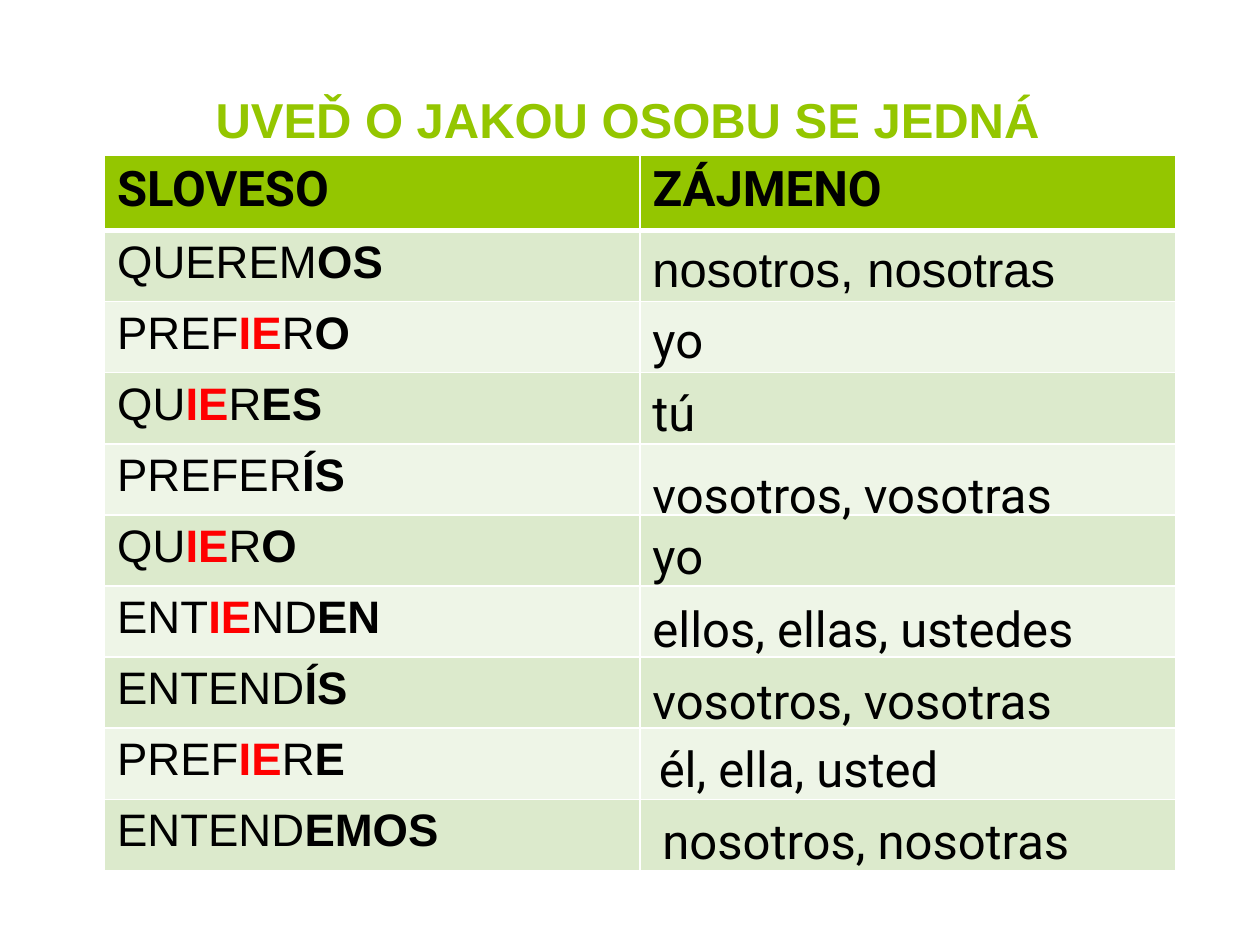
"""Build a Spanish verb exercise slide with a table and its answers."""
from dataclasses import dataclass

from lxml import etree
from pptx import Presentation
from pptx.dml.color import RGBColor
from pptx.enum import text
from pptx.oxml.ns import qn
from pptx.util import Inches, Pt


@dataclass(frozen=True)
class Theme:
    """Colours, fonts and type sizes of the slide."""
    accent: str = "94C600"
    band_dark: str = "DCEACC"
    band_light: str = "EEF5E7"
    line: str = "FFFFFF"
    ink: str = "000000"
    mark: str = "FF0000"
    plain_font: str = "Arial"
    accent_font: str = "Roboto"
    large: int = 28
    verb: int = 26


THEME = Theme()
HEADERS = ("SLOVESO", "ZÁJMENO")
VERBS = (
    ("QUEREM", "", "", "OS"),
    ("PREF", "IE", "R", "O"),
    ("QU", "IE", "R", "ES"),
    ("PREFER", "", "", "ÍS"),
    ("QU", "IE", "R", "O"),
    ("ENT", "IE", "ND", "EN"),
    ("ENTEND", "", "", "ÍS"),
    ("PREF", "IE", "R", "E"),
    ("ENTEND", "", "", "EMOS"),
)
ANSWERS = (
    ("nosotros, nosotras", 0, 0.61, 4.09, THEME.plain_font),
    ("yo", 0, 1.18, 3.39, THEME.accent_font),
    ("tú", 0, 1.76, 3.7, THEME.accent_font),
    ("vosotros, vosotras", 0, 2.41, 3.94, THEME.accent_font),
    ("yo", 0, 2.89, 2.68, THEME.accent_font),
    ("ellos, ellas, ustedes", 0, 3.47, 4.09, THEME.accent_font),
    ("vosotros, vosotras", 0, 4.04, 3.94, THEME.accent_font),
    ("él, ella, usted", 0.05, 4.58, 3.78, THEME.accent_font),
    ("nosotros, nosotras", 0.08, 5.15, 3.94, THEME.accent_font),
)


def add_run(p, wording, size=THEME.large, font=THEME.accent_font,
            color=THEME.ink, bold=False):
    """Append a formatted run to a paragraph."""
    r = p.add_run()
    r.text = wording
    r.font.size = Pt(size)
    r.font.name = font
    r.font.bold = bold
    r.font.color.rgb = RGBColor.from_string(color)


def add_box(s, left, top, width, height):
    """Add a wrapping text box and return its text frame."""
    tf = s.shapes.add_textbox(left, top, width, height).text_frame
    tf.word_wrap = True
    return tf


def style_cell(cell, fill, bottom=1):
    """Fill a cell and draw its borders."""
    tc_pr = cell._tc.get_or_add_tcPr()
    for side, width in (("L", 1), ("R", 1), ("T", 1), ("B", bottom)):
        ln = etree.SubElement(tc_pr, qn(f"a:ln{side}"), w=str(Pt(width)))
        solid = etree.SubElement(ln, qn("a:solidFill"))
        etree.SubElement(solid, qn("a:srgbClr"), val=THEME.line)
    cell.fill.solid()
    cell.fill.fore_color.rgb = RGBColor.from_string(fill)


def add_title(s, left, top, width, height):
    """Place the centred slide title."""
    tf = add_box(s, left, top, width, height)
    tf.vertical_anchor = text.MSO_ANCHOR.BOTTOM
    p = tf.paragraphs[0]
    p.alignment = text.PP_ALIGN.CENTER
    add_run(p, "UVEĎ O JAKOU OSOBU SE JEDNÁ", font=THEME.plain_font,
            color=THEME.accent, bold=True)


def add_verb_table(s, left, top, width, height):
    """Place the verb table with an empty pronoun column."""
    table = s.shapes.add_table(len(VERBS) + 1, len(HEADERS),
                               left, top, width, height).table
    header_height = Inches(0.6)
    for column in table.columns:
        column.width = width // len(HEADERS)
    for row in table.rows:
        row.height = (height - header_height) // len(VERBS)
    table.rows[0].height = header_height
    for col, label in enumerate(HEADERS):
        cell = table.cell(0, col)
        style_cell(cell, THEME.accent, bottom=3)
        add_run(cell.text_frame.paragraphs[0], label, bold=True)
    for row, parts in enumerate(VERBS, 1):
        fill = THEME.band_dark if row % 2 else THEME.band_light
        for col in range(len(HEADERS)):
            style_cell(table.cell(row, col), fill)
        p = table.cell(row, 0).text_frame.paragraphs[0]
        for i, part in enumerate(parts):
            if part:
                add_run(p, part, size=THEME.verb, font=THEME.plain_font,
                        color=THEME.mark if i == 1 else THEME.ink,
                        bold=i in (1, 3))


def add_answers(s, left, top, height):
    """Place the pronoun answers over the second column."""
    for wording, indent, offset, width, font in ANSWERS:
        tf = add_box(s, left + Inches(indent), top + Inches(offset),
                     Inches(width), height)
        tf.auto_size = text.MSO_AUTO_SIZE.SHAPE_TO_FIT_TEXT
        add_run(tf.paragraphs[0], wording, font=font)


def main():
    """Build and save the presentation."""
    prs = Presentation()
    prs.slide_width, prs.slide_height = Inches(10), Inches(7.5)
    s = prs.slides.add_slide(prs.slide_layouts[6])
    left, top, width = Inches(0.83), Inches(1.23), Inches(8.5)
    add_title(s, Inches(1.14), Inches(0.68), Inches(7.68), Inches(0.55))
    add_verb_table(s, left, top, width, Inches(5.68))
    add_answers(s, left + width // 2, top, Inches(0.57))
    prs.save("out.pptx")


if __name__ == "__main__":
    main()
